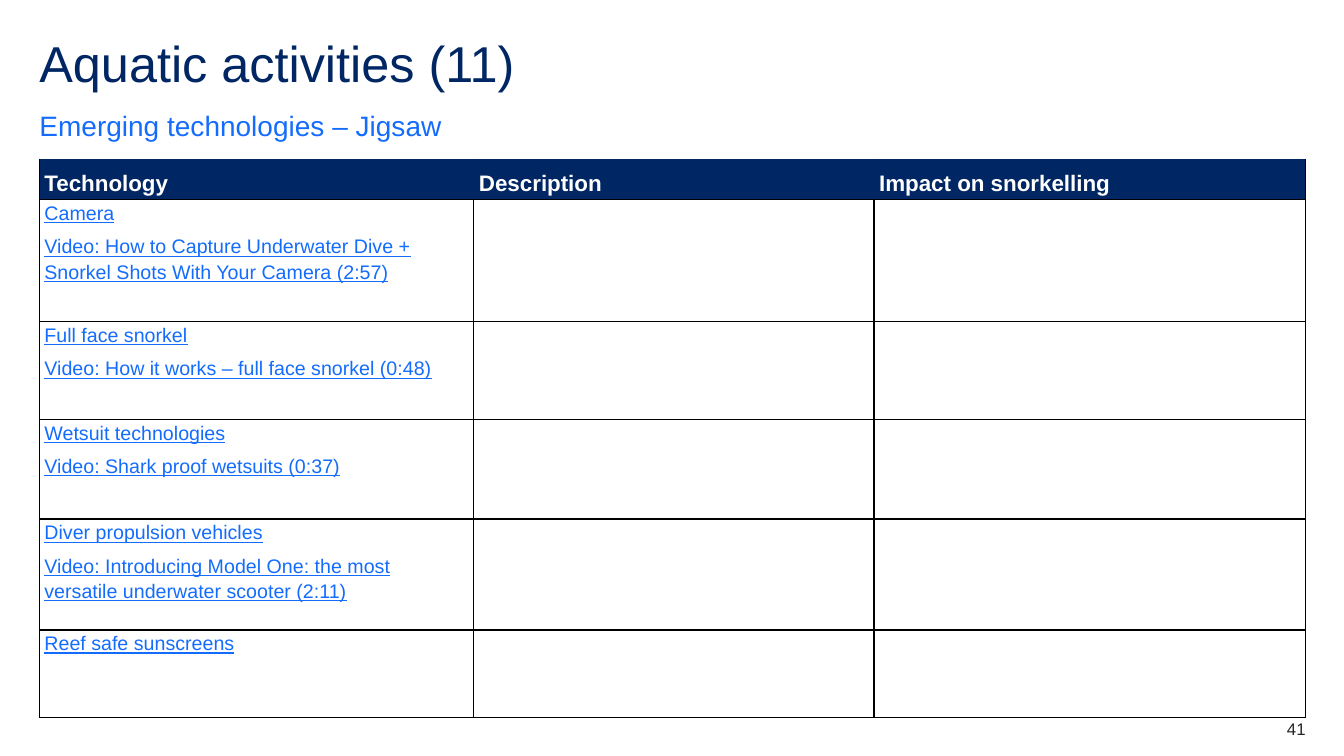
import dataclasses

import pptx
import pptx.dml.color
import pptx.enum.text
import pptx.oxml
import pptx.oxml.ns
import pptx.util

ANCHOR = pptx.enum.text.MSO_ANCHOR
ALIGN = pptx.enum.text.PP_ALIGN


@dataclasses.dataclass(frozen=True)
class Theme:
    """Colours, font and type sizes of the page."""

    font: str = "Arial"
    navy: str = "002664"
    blue: str = "146CFD"
    ink: str = "22272B"
    rule: str = "000000"
    white: str = "FFFFFF"
    title_size: int = 36
    subtitle_size: int = 20
    header_size: int = 16
    body_size: int = 14
    number_size: int = 12


THEME = Theme()
WIDTH = pptx.util.Inches(13.33)
HEIGHT = pptx.util.Inches(7.5)
LEFT, FULL = 2.93, 94.22
COLUMNS = [32.33, 29.78, 32.11]
ROWS = [4, 16.13, 12.93, 13.2, 14.67, 11.6]
HEADERS = ["Technology", "Description", "Impact on snorkelling"]
TECHNOLOGIES = [
    ["Camera", "Video: How to Capture Underwater Dive + Snorkel Shots With Your Camera (2:57)"],
    ["Full face snorkel", "Video: How it works – full face snorkel (0:48)"],
    ["Wetsuit technologies", "Video: Shark proof wetsuits (0:37)"],
    ["Diver propulsion vehicles",
     "Video: Introducing Model One: the most versatile underwater scooter (2:11)"],
    ["Reef safe sunscreens"],
]


def across(percent):
    """Turn a percentage of the slide width into a length."""
    return int(WIDTH * percent / 100)


def down(percent):
    """Turn a percentage of the slide height into a length."""
    return int(HEIGHT * percent / 100)


def apply_format(target, values):
    """Set each named attribute of the target."""
    for name, value in values.items():
        setattr(target, name, value)


def write_lines(frame, lines, size, color, layout, **style):
    """Fill a text frame with one formatted paragraph per line."""
    for index, line in enumerate(lines):
        para = frame.paragraphs[0] if index == 0 else frame.add_paragraph()
        apply_format(para, layout)
        span = para.add_run()
        span.text = line
        apply_format(span.font, {"name": THEME.font, "size": pptx.util.Pt(size), **style})
        span.font.color.rgb = pptx.dml.color.RGBColor.from_string(color)


def add_label(page, place, text, size, color, layout, anchor=ANCHOR.TOP):
    """Add a text box without margins at a place given in percent."""
    left, top, width, height = place
    box = page.shapes.add_textbox(across(left), down(top), across(width), down(height))
    apply_format(box.text_frame, {
        "margin_left": 0, "margin_right": 0, "margin_top": 0, "margin_bottom": 0,
        "word_wrap": True, "vertical_anchor": anchor,
    })
    write_lines(box.text_frame, [text], size, color, layout)


def style_cell(cell, fill, borders):
    """Set the margins, borders and fill of a table cell."""
    side = pptx.util.Inches(0.05)
    apply_format(cell, {
        "margin_left": side, "margin_right": side, "margin_top": 0, "margin_bottom": 0,
    })
    properties = cell._tc.get_or_add_tcPr()
    for edge, color in zip("LRTB", borders):
        properties.append(pptx.oxml.parse_xml(
            f'<a:ln{edge} {pptx.oxml.ns.nsdecls("a")} w="12700"><a:solidFill>'
            f'<a:srgbClr val="{color}"/></a:solidFill></a:ln{edge}>'))
    cell.fill.solid()
    cell.fill.fore_color.rgb = pptx.dml.color.RGBColor.from_string(fill)


def add_technology_table(page):
    """Add the table with its header and one row per technology."""
    table = page.shapes.add_table(
        len(ROWS), len(COLUMNS), across(LEFT), down(21.07), across(FULL), down(sum(ROWS))).table
    apply_format(table, {"first_row": False, "horz_banding": False})
    for column, share in zip(table.columns, COLUMNS):
        column.width = across(share)
    for row, share in zip(table.rows, ROWS):
        row.height = down(share)

    last = len(HEADERS) - 1
    header_layout = {"line_spacing": 1.5, "space_after": pptx.util.Pt(6)}
    for index, header in enumerate(HEADERS):
        cell = table.cell(0, index)
        left = THEME.rule if index == 0 else THEME.navy
        right = THEME.rule if index == last else THEME.navy
        style_cell(cell, THEME.navy, [left, right, THEME.navy, THEME.rule])
        write_lines(cell.text_frame, [header], THEME.header_size, THEME.white,
                    header_layout, bold=True)

    body_layout = {"line_spacing": 1.14, "space_after": pptx.util.Pt(6)}
    for row, lines in enumerate(TECHNOLOGIES, start=1):
        for column in range(len(COLUMNS)):
            style_cell(table.cell(row, column), THEME.white, [THEME.rule] * 4)
        write_lines(table.cell(row, 0).text_frame, lines, THEME.body_size, THEME.blue,
                    body_layout, bold=False, underline=True)


def main():
    """Build the page and save the deck."""
    deck = pptx.Presentation()
    apply_format(deck, {"slide_width": WIDTH, "slide_height": HEIGHT})
    page = deck.slides.add_slide(deck.slide_layouts[6])
    add_label(page, (LEFT, 5.2, FULL, 8), "Aquatic activities (11)",
              THEME.title_size, THEME.navy, {"line_spacing": 0.9})
    add_label(page, (LEFT, 14.27, FULL, 4.53), "Emerging technologies – Jigsaw",
              THEME.subtitle_size, THEME.blue,
              {"line_spacing": 1.5, "space_after": pptx.util.Pt(12)}, ANCHOR.BOTTOM)
    add_technology_table(page)
    add_label(page, (91.22, 95.07, 5.93, 2.67), "41",
              THEME.number_size, THEME.ink, {"alignment": ALIGN.RIGHT})
    deck.save("out.pptx")


if __name__ == "__main__":
    main()
